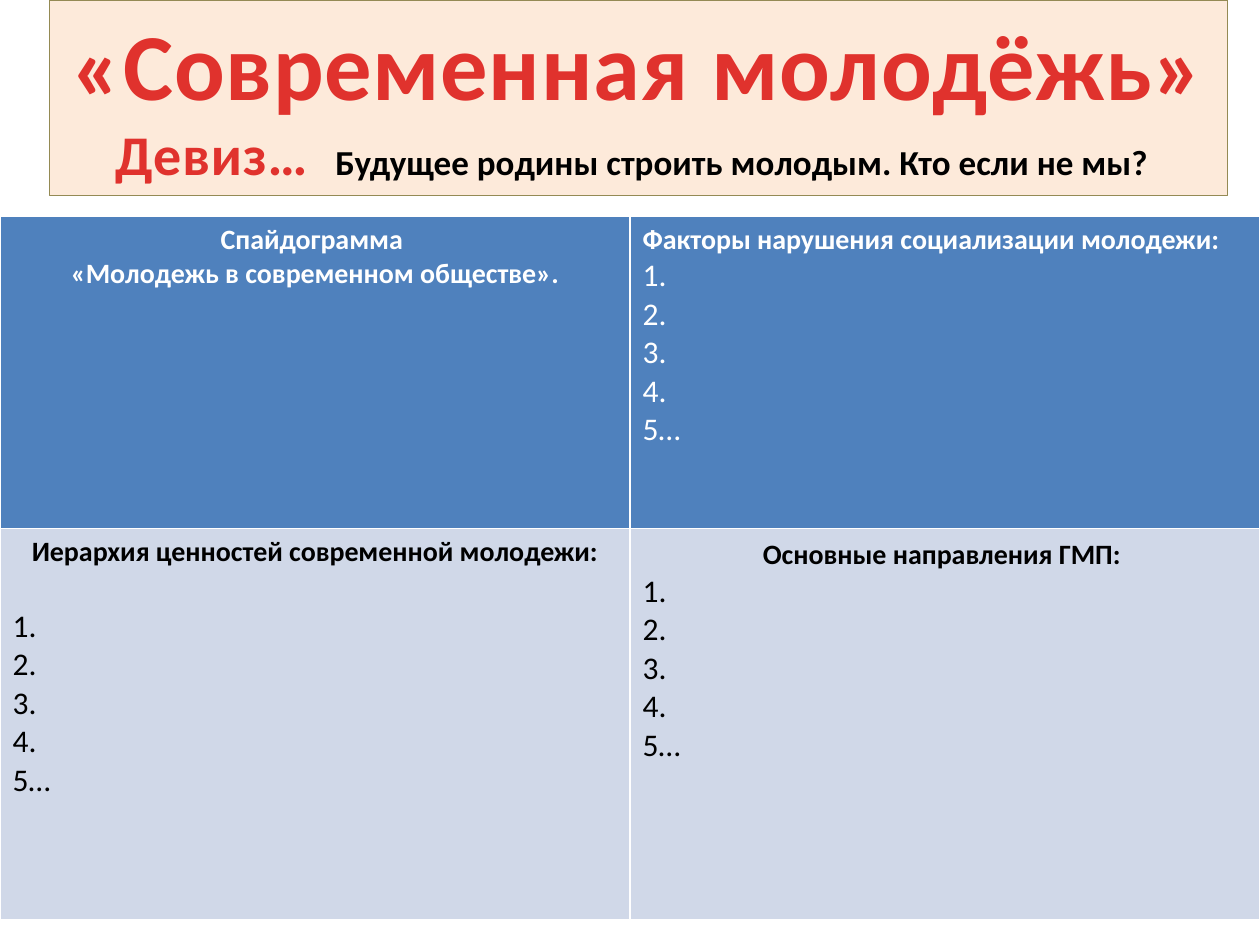
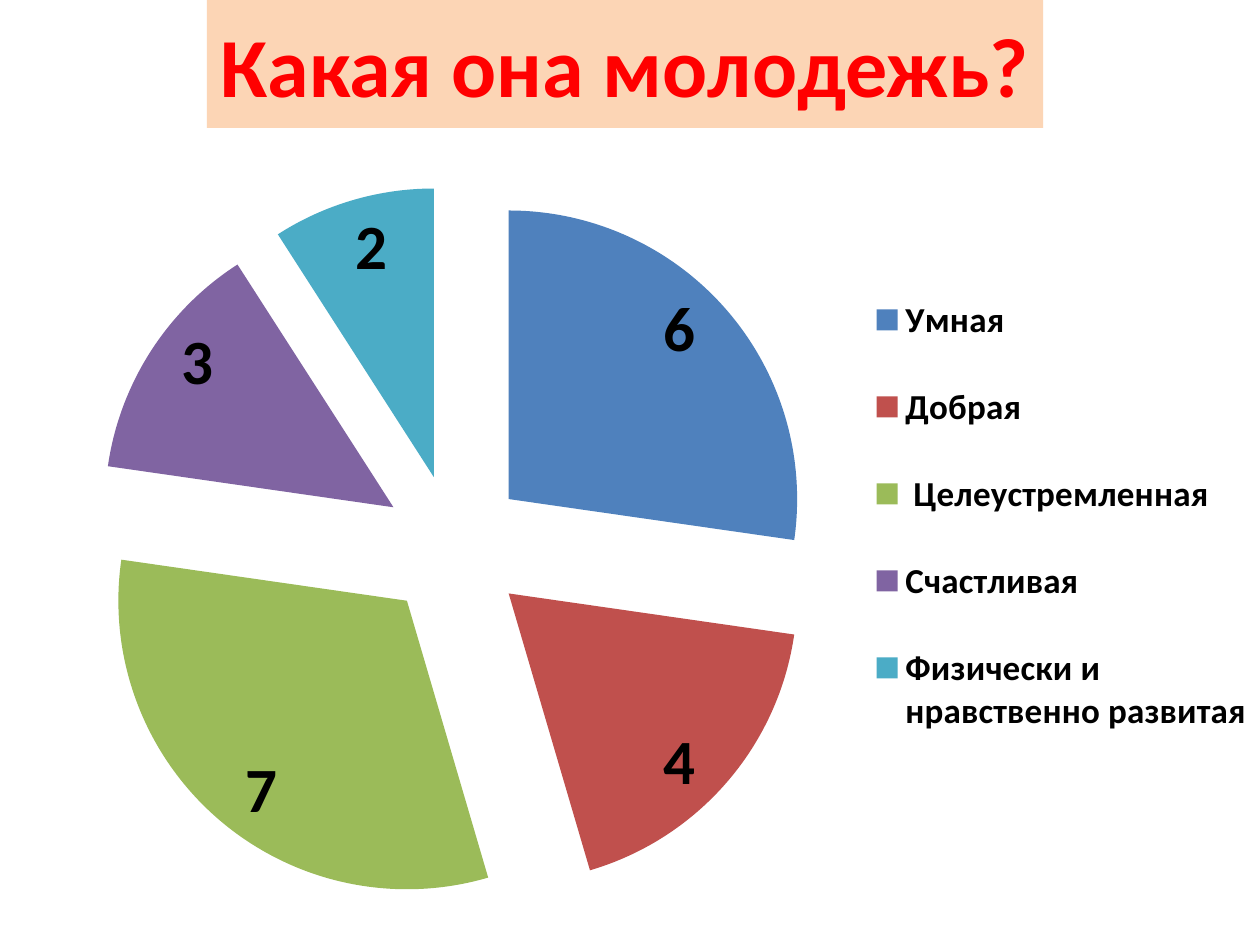
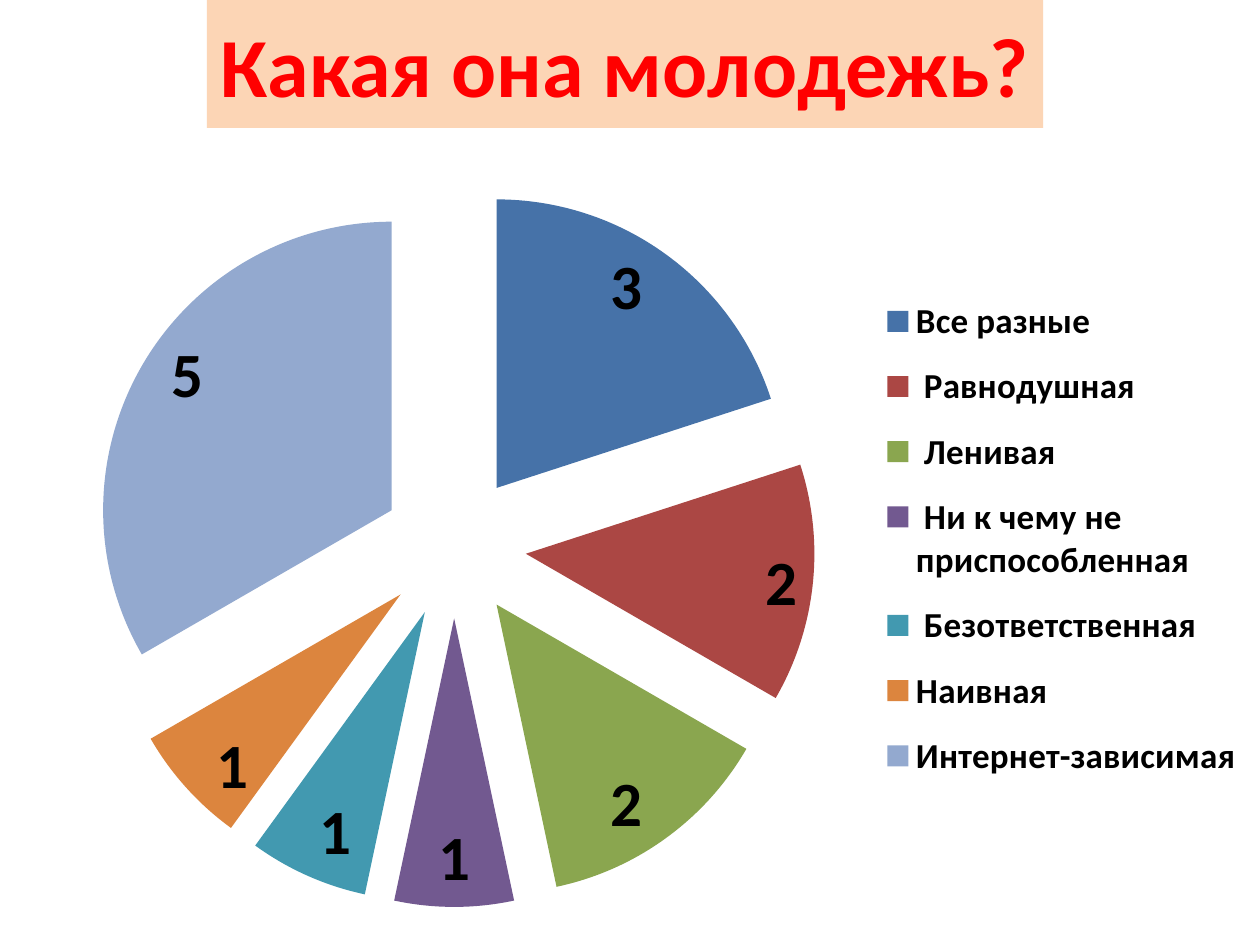
from lxml import etree
from pptx import Presentation, util as u
from pptx.chart import data as chart_data
from pptx.dml import color
from pptx.enum import chart as chart_enum, shapes, text
from pptx.oxml import ns, parse_xml

FONT = "Calibri"
COLORS = {
    "white": "FFFFFF", "black": "000000", "headline": "E0322D", "title": "FF0000",
    "banner": "FDEADA", "banner_edge": "948A54", "title_band": "FCD5B5",
    "outline": "595959", "header_cell": "4F81BD", "body_cell": "D0D8E8",
}
BRIGHT = ["4F81BD", "C0504D", "9BBB59", "8064A2", "4BACC6"]
MUTED = ["4672A8", "AB4744", "8AA64F", "725990", "4299B0", "DC853E", "93A9CF"]
CENTER, LEFT = text.PP_ALIGN.CENTER, text.PP_ALIGN.LEFT
ANSWERS = ["1.", "2.", "3.", "4.", "5…"]
TITLE_BOX = (4.17, 0, 16.86, 2.58)
CHART_BOX = (0.41, 2.97, 24.99, 15.47)
EXPLOSION = 25


def rgb(name):
    return color.RGBColor.from_string(COLORS.get(name, name))


def lengths(box):
    return [u.Cm(side) for side in box]


def style(font, size, tint="black", bold=True):
    font.name = FONT
    font.size = u.Pt(size)
    font.bold = bold
    font.color.rgb = rgb(tint)


def add_run(paragraph, wording, size, tint="black", spacing=0):
    run = paragraph.add_run()
    run.text = wording
    style(run.font, size, tint)
    if spacing:
        run.font._element.set("spc", str(spacing))
    return run


def add_band(slide, box, fill, edge=None):
    band = slide.shapes.add_shape(shapes.MSO_SHAPE.RECTANGLE, *lengths(box))
    band.shadow.inherit = False
    band.fill.solid()
    band.fill.fore_color.rgb = rgb(fill)
    if edge:
        band.line.color.rgb = rgb(edge)
        band.line.width = u.Pt(0.75)
    else:
        band.line.fill.background()
    return band.text_frame


def add_motto_banner(slide, box):
    banner = add_band(slide, box, "banner", "banner_edge")
    banner.word_wrap = True
    banner.vertical_anchor = text.MSO_ANCHOR.TOP
    name = banner.paragraphs[0]
    name.alignment = CENTER
    add_run(name, "«Современная молодёжь»", 54, "headline", 50)
    motto = banner.add_paragraph()
    motto.alignment = LEFT
    motto._p.get_or_add_pPr().set("marL", str(u.Cm(1.07)))
    add_run(motto, "Девиз…", 32, "headline", 50)
    add_run(motto, " ", 32, "headline", 800)
    add_run(motto, "Будущее родины строить молодым. Кто если не мы?", 20)


def fill_cell(cell, fill, tint, headings, answers=(), alignment=CENTER, gap=0, drop=0):
    cell.fill.solid()
    cell.fill.fore_color.rgb = rgb(fill)
    cell.margin_top = u.Cm(0.13 + drop)
    cell.text_frame.text = "\n".join([*headings, *answers])
    for index, paragraph in enumerate(cell.text_frame.paragraphs):
        is_heading = index < len(headings)
        paragraph.alignment = alignment if is_heading else LEFT
        style(paragraph.runs[0].font, 16 if is_heading else 18, tint, is_heading)
    if gap:
        cell.text_frame.paragraphs[len(headings) - 1].space_after = u.Pt(gap)


def add_worksheet(slide, box, row_heights):
    grid = slide.shapes.add_table(2, 2, *lengths(box)).table
    grid.horz_banding = False
    for row, height in zip(grid.rows, row_heights):
        row.height = u.Cm(height)
    fill_cell(grid.cell(0, 0), "header_cell", "white",
              ["Спайдограмма ", "«Молодежь в современном обществе»."])
    fill_cell(grid.cell(0, 1), "header_cell", "white",
              ["Факторы нарушения социализации молодежи:"], ANSWERS, LEFT)
    fill_cell(grid.cell(1, 0), "body_cell", "black",
              ["Иерархия ценностей современной молодежи:"], ANSWERS, gap=22)
    fill_cell(grid.cell(1, 1), "body_cell", "black",
              ["Основные направления ГМП: "], ANSWERS, drop=0.07)


def add_question_title(slide, box):
    title = add_band(slide, box, "title_band")
    title.word_wrap = False
    title.vertical_anchor = text.MSO_ANCHOR.MIDDLE
    question = title.paragraphs[0]
    question.alignment = CENTER
    run = add_run(question, "Какая она молодежь?", 48, "title")
    run.font._element.insert(0, parse_xml(
        f'<a:ln {ns.nsdecls("a")} w="9525"><a:solidFill>'
        f'<a:srgbClr val="{COLORS["outline"]}"/></a:solidFill></a:ln>'))


def manual_layout(**settings):
    layout = etree.Element(ns.qn("c:layout"))
    manual = etree.SubElement(layout, ns.qn("c:manualLayout"))
    for tag, value in settings.items():
        etree.SubElement(manual, ns.qn(f"c:{tag}")).set("val", str(value))
    return layout


def place_plot(plot_area, **fractions):
    for old_layout in plot_area.findall(ns.qn("c:layout")):
        plot_area.remove(old_layout)
    plot_area.insert(0, manual_layout(
        layoutTarget="inner", xMode="edge", yMode="edge", **fractions))


def place_legend(legend, **fractions):
    for old_layout in legend.findall(ns.qn("c:layout")):
        legend.remove(old_layout)
    legend.find(ns.qn("c:legendPos")).addnext(
        manual_layout(xMode="edge", yMode="edge", **fractions))


def add_opinion_pie(slide, box, votes, palette, legend_top):
    opinions = chart_data.CategoryChartData()
    opinions.categories = list(votes)
    opinions.add_series("Series 1", list(votes.values()))
    pie = slide.shapes.add_chart(
        chart_enum.XL_CHART_TYPE.PIE, *lengths(box), opinions).chart
    style(pie.font, 18, bold=False)
    pie.has_title = False
    pie.has_legend = True
    pie.legend.position = chart_enum.XL_LEGEND_POSITION.RIGHT
    pie.legend.include_in_layout = False
    style(pie.legend.font, 20)

    plot = pie.plots[0]
    plot.vary_by_categories = True
    answers = plot.series[0]
    explosion = etree.Element(ns.qn("c:explosion"), val=str(EXPLOSION))
    answers._element.find(ns.qn("c:tx")).addnext(explosion)
    for index, tint in enumerate(palette):
        slice_fill = answers.points[index].format.fill
        slice_fill.solid()
        slice_fill.fore_color.rgb = rgb(tint)
    counts = answers.data_labels
    counts.show_value = True
    counts.position = chart_enum.XL_LABEL_POSITION.BEST_FIT
    style(counts.font, 36)
    place_plot(pie._chartSpace.chart.plotArea, x=0, y=0.05, w=0.7, h=0.94)
    place_legend(pie.legend._element, x=0.68, y=legend_top, w=0.32, h=0.68)


def build_worksheet_slide(slide):
    add_motto_banner(slide, (1, 0, 23.75, 3.94))
    add_worksheet(slide, (0, 4.36, 25.4, 14.19), (6.29, 7.9))


def build_opinion_slide(slide, votes, palette, legend_top):
    add_question_title(slide, TITLE_BOX)
    add_opinion_pie(slide, CHART_BOX, votes, palette, legend_top)


def main():
    deck = Presentation()
    deck.slide_width, deck.slide_height = u.Cm(25.4), u.Cm(19.05)
    blank = deck.slide_layouts[6]
    build_worksheet_slide(deck.slides.add_slide(blank))
    build_opinion_slide(deck.slides.add_slide(blank), {
        "Умная": 6, "Добрая": 4, " Целеустремленная": 7, "Счастливая": 3,
        "Физически и нравственно развитая": 2,
    }, BRIGHT, 0.14)
    build_opinion_slide(deck.slides.add_slide(blank), {
        "Все разные": 3, " Равнодушная": 2, " Ленивая": 2,
        " Ни к чему не приспособленная": 1, " Безответственная": 1,
        "Наивная": 1, "Интернет-зависимая": 5,
    }, MUTED, 0.17)
    deck.save("out.pptx")


if __name__ == "__main__":
    main()
